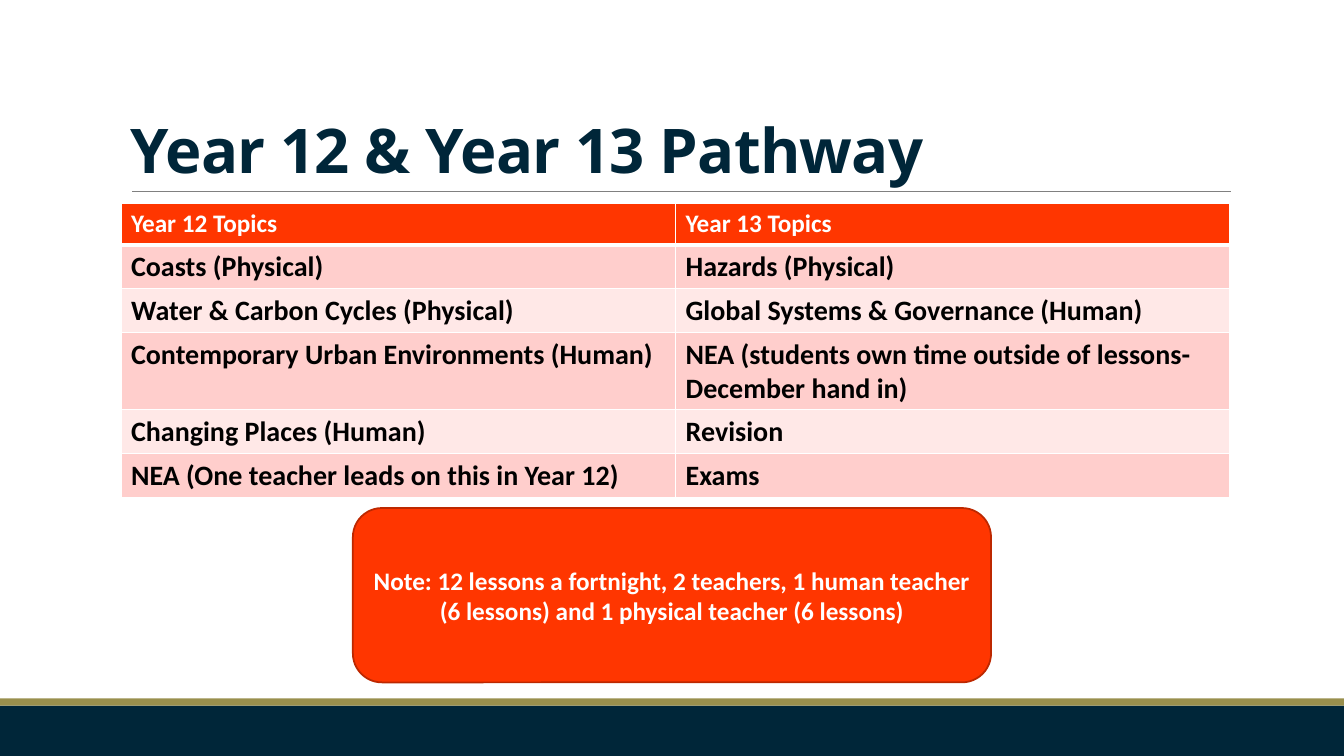
from lxml import etree
from pptx import Presentation
from pptx.dml.color import RGBColor
from pptx.enum.shapes import MSO_CONNECTOR, MSO_SHAPE
from pptx.enum.text import MSO_ANCHOR, PP_ALIGN
from pptx.oxml.ns import qn
from pptx.util import Inches, Pt

RECTANGLE = MSO_SHAPE.RECTANGLE
ROUNDED = MSO_SHAPE.ROUNDED_RECTANGLE
STRAIGHT = MSO_CONNECTOR.STRAIGHT
BOTTOM, MIDDLE = MSO_ANCHOR.BOTTOM, MSO_ANCHOR.MIDDLE
CENTER = PP_ALIGN.CENTER

COLORS = {
    "navy": "002639",
    "gold": "998F4D",
    "rule": "808080",
    "orange": "FF3600",
    "orange_dark": "BD2800",
    "band_dark": "FFCECC",
    "band_light": "FFE8E7",
    "white": "FFFFFF",
    "black": "000000",
}
SLIDE_WIDTH, SLIDE_HEIGHT = 13.33, 7.5
TOPICS = [
    ("Year 12 Topics", "Year 13 Topics"),
    ("Coasts (Physical)", "Hazards (Physical)"),
    ("Water & Carbon Cycles (Physical)", "Global Systems & Governance (Human)"),
    ("Contemporary Urban Environments (Human)",
     "NEA (students own time outside of lessons-December hand in)"),
    ("Changing Places (Human)", "Revision"),
    ("NEA (One teacher leads on this in Year 12)", "Exams"),
]
NOTE = ("Note: 12 lessons a fortnight, 2 teachers, 1 human teacher "
        "(6 lessons) and 1 physical teacher (6 lessons)")


def color(name):
    return RGBColor.from_string(COLORS[name])


def add_bold_run(paragraph, text, size, color_name, font="Calibri"):
    run = paragraph.add_run()
    run.text = text
    run.font.name = font
    run.font.size = Pt(size)
    run.font.bold = True
    run.font.color.rgb = color(color_name)
    return run


def add_filled_shape(slide, kind, box, fill):
    shape = slide.shapes.add_shape(kind, *map(Inches, box))
    shape.shadow.inherit = False
    shape.fill.solid()
    shape.fill.fore_color.rgb = color(fill)
    shape.line.fill.background()
    return shape


def set_cell_borders(cell, bottom_width):
    """Draw white borders; they must come before the cell's fill."""
    properties = cell._tc.get_or_add_tcPr()
    widths = {"a:lnL": 1, "a:lnR": 1, "a:lnT": 1, "a:lnB": bottom_width}
    for tag, width in widths.items():
        line = etree.SubElement(properties, qn(tag), w=str(Pt(width)))
        fill = etree.SubElement(line, qn("a:solidFill"))
        etree.SubElement(fill, qn("a:srgbClr"), val=COLORS["white"])


def add_footer(slide, box):
    left, top, width, height = box
    stripe = 0.07
    add_filled_shape(slide, RECTANGLE, (left, top + stripe, width, height - stripe), "navy")
    add_filled_shape(slide, RECTANGLE, (left, top, width, stripe), "gold")


def add_title(slide, box):
    left, top, width, height = box
    # Rule under the title
    bottom = Inches(top + height)
    rule = slide.shapes.add_connector(
        STRAIGHT, Inches(left + 0.11), bottom, Inches(left + width + 0.01), bottom)
    rule.line.color.rgb = color("rule")
    rule.line.width = Pt(0.5)
    etree.SubElement(rule._element.spPr, qn("a:effectLst"))

    # Title text
    frame = slide.shapes.add_textbox(*map(Inches, box)).text_frame
    frame.word_wrap = True
    frame.vertical_anchor = BOTTOM
    paragraph = frame.paragraphs[0]
    paragraph.line_spacing = 0.85
    run = add_bold_run(paragraph, "Year 12 & Year 13 Pathway", 44, "navy", "Open Sans")
    run.font._element.set("spc", "-50")


def add_topics_table(slide, box):
    table = slide.shapes.add_table(len(TOPICS), len(TOPICS[0]), *map(Inches, box)).table
    for row_index, topics in enumerate(TOPICS):
        if row_index == 0:
            fill, size, text_color, bottom_width = "orange", 18, "white", 3
        else:
            fill = "band_dark" if row_index % 2 else "band_light"
            size, text_color, bottom_width = 20, "black", 1
        for column_index, topic in enumerate(topics):
            cell = table.cell(row_index, column_index)
            set_cell_borders(cell, bottom_width)
            cell.fill.solid()
            cell.fill.fore_color.rgb = color(fill)
            add_bold_run(cell.text_frame.paragraphs[0], topic, size, text_color)


def add_note(slide, box):
    shape = add_filled_shape(slide, ROUNDED, box, "orange")
    shape.line.color.rgb = color("orange_dark")
    shape.line.width = Pt(1.25)
    frame = shape.text_frame
    frame.word_wrap = True
    frame.vertical_anchor = MIDDLE
    paragraph = frame.paragraphs[0]
    paragraph.alignment = CENTER
    add_bold_run(paragraph, NOTE, 18, "white")


def main():
    presentation = Presentation()
    presentation.slide_width = Inches(SLIDE_WIDTH)
    presentation.slide_height = Inches(SLIDE_HEIGHT)
    slide = presentation.slides.add_slide(presentation.slide_layouts[6])
    add_footer(slide, (0, 6.93, SLIDE_WIDTH, 0.57))
    add_title(slide, (1.2, 0.31, 11, 1.59))
    add_topics_table(slide, (1.2, 2.02, 11, 2.46))
    add_note(slide, (3.5, 5.04, 6.33, 1.73))
    presentation.save("out.pptx")


if __name__ == "__main__":
    main()
